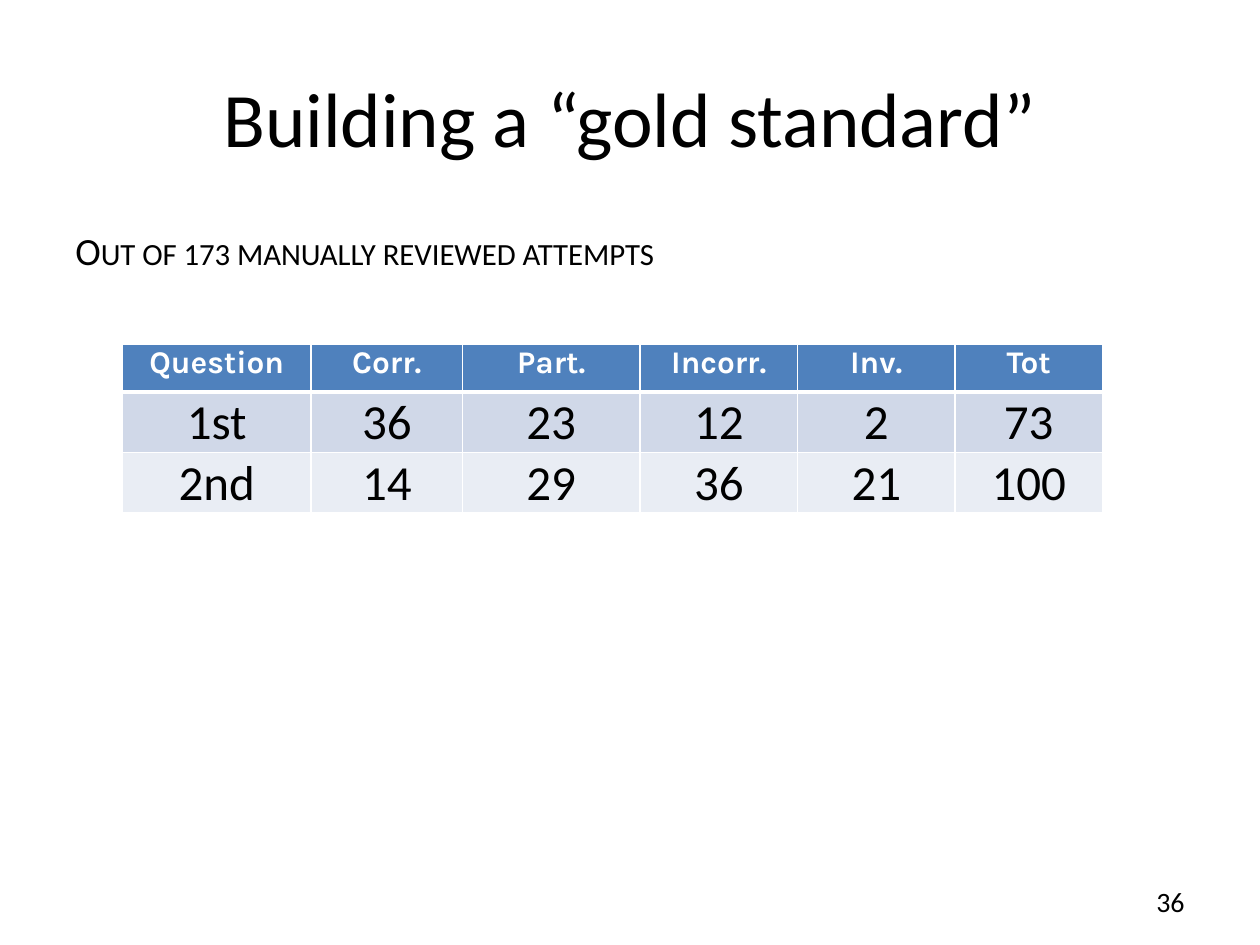
from lxml.etree import SubElement
from pptx import Presentation
from pptx.dml.color import RGBColor
from pptx.enum.text import MSO_ANCHOR, PP_ALIGN
from pptx.oxml.ns import qn
from pptx.util import Inches, Pt

BLACK = RGBColor(0x00, 0x00, 0x00)
WHITE = RGBColor(0xFF, 0xFF, 0xFF)
HEADER_BLUE = RGBColor(0x4F, 0x81, 0xBD)
BAND_DARK = RGBColor(0xD0, 0xD8, 0xE8)
BAND_LIGHT = RGBColor(0xE9, 0xED, 0xF4)

GRID = 0.5  # inches per grid unit: 20 columns by 15 rows
RESULTS = [
    ["Question", "Corr.", "Part.", "Incorr.", "Inv.", "Tot"],
    ["1st", "36", "23", "12", "2", "73"],
    ["2nd", "14", "29", "36", "21", "100"],
]
COLUMN_WIDTHS = [3, 2.4, 2.82, 2.5, 2.5, 2.34]
ROW_HEIGHTS = [0.76, 0.96, 0.96]


def units(count):
    return Inches(count * GRID)


class SlideBuilder:
    """Holds the text style and the slide being filled; lengths are grid units."""

    body_font = "Calibri"
    header_font = "Karla"

    def __init__(self, deck):
        self.slide = deck.slides.add_slide(deck.slide_layouts[5])

    def format_text(self, frame, text, size, align, color=BLACK, font=None, bold=False):
        frame.text = text
        para = frame.paragraphs[0]
        para.alignment = align
        span = para.runs[0]
        span.font.name = font or self.body_font
        span.font.size = Pt(size)
        span.font.bold = bold
        span.font.color.rgb = color
        return para

    def title(self, text, left, top, width, height):
        box = self.slide.shapes.title
        box.left, box.top = units(left), units(top)
        box.width, box.height = units(width), units(height)
        box.text_frame.vertical_anchor = MSO_ANCHOR.MIDDLE
        self.format_text(box.text_frame, text, 44, PP_ALIGN.CENTER)

    def text(self, text, left, top, width, height, size,
             align=PP_ALIGN.LEFT, anchor=MSO_ANCHOR.TOP):
        box = self.slide.shapes.add_textbox(
            units(left), units(top), units(width), units(height))
        box.text_frame.word_wrap = True
        box.text_frame.vertical_anchor = anchor
        return self.format_text(box.text_frame, text, size, align)

    def table(self, rows, left, top, widths, heights):
        table = self.slide.shapes.add_table(
            len(rows), len(widths), units(left), units(top),
            units(sum(widths)), units(sum(heights))).table
        for column, width in zip(table.columns, widths):
            column.width = units(width)
        for row, height in zip(table.rows, heights):
            row.height = units(height)
        for row_index, values in enumerate(rows):
            for column_index, value in enumerate(values):
                self.table_cell(table.cell(row_index, column_index), value, row_index)

    def table_cell(self, cell, value, row_index):
        is_header = row_index == 0
        cell.margin_left = cell.margin_right = Inches(0.05)
        cell.margin_top = cell.margin_bottom = 0
        if is_header:
            para = self.format_text(cell.text_frame, value, 18, PP_ALIGN.CENTER,
                                    WHITE, self.header_font, True)
        else:
            para = self.format_text(cell.text_frame, value, 28, PP_ALIGN.CENTER)
        para.line_spacing = 1.01 if is_header else 1.02
        self.cell_borders(cell, top=3 if row_index == 1 else 1,
                          bottom=3 if is_header else 1)
        cell.fill.solid()
        cell.fill.fore_color.rgb = (HEADER_BLUE, BAND_DARK, BAND_LIGHT)[row_index]

    def cell_borders(self, cell, top, bottom):
        """Draws white borders; must come before the fill in the cell's XML."""
        properties = cell._tc.get_or_add_tcPr()
        for side, width in (("L", 1), ("R", 1), ("T", top), ("B", bottom)):
            line = SubElement(properties, qn(f"a:ln{side}"), w=str(Pt(width)))
            fill = SubElement(line, qn("a:solidFill"))
            SubElement(fill, qn("a:srgbClr"), val=str(WHITE))


def main():
    deck = Presentation()
    deck.slide_width, deck.slide_height = units(20), units(15)
    page = SlideBuilder(deck)
    page.title("Building a “gold standard”", 1, 0.6, 18, 2.5)
    caption = page.text("Out of 173 manually reviewed attempts", 1, 3.5, 18, 1.04, 22)
    caption.space_before = Pt(8)
    caption.runs[0].font._element.set("cap", "small")
    page.table(RESULTS, 1.94, 5.46, COLUMN_WIDTHS, ROW_HEIGHTS)
    page.text("36", 14.34, 13.9, 4.66, 0.8, 16, PP_ALIGN.RIGHT, MSO_ANCHOR.MIDDLE)
    deck.save("out.pptx")


if __name__ == "__main__":
    main()
